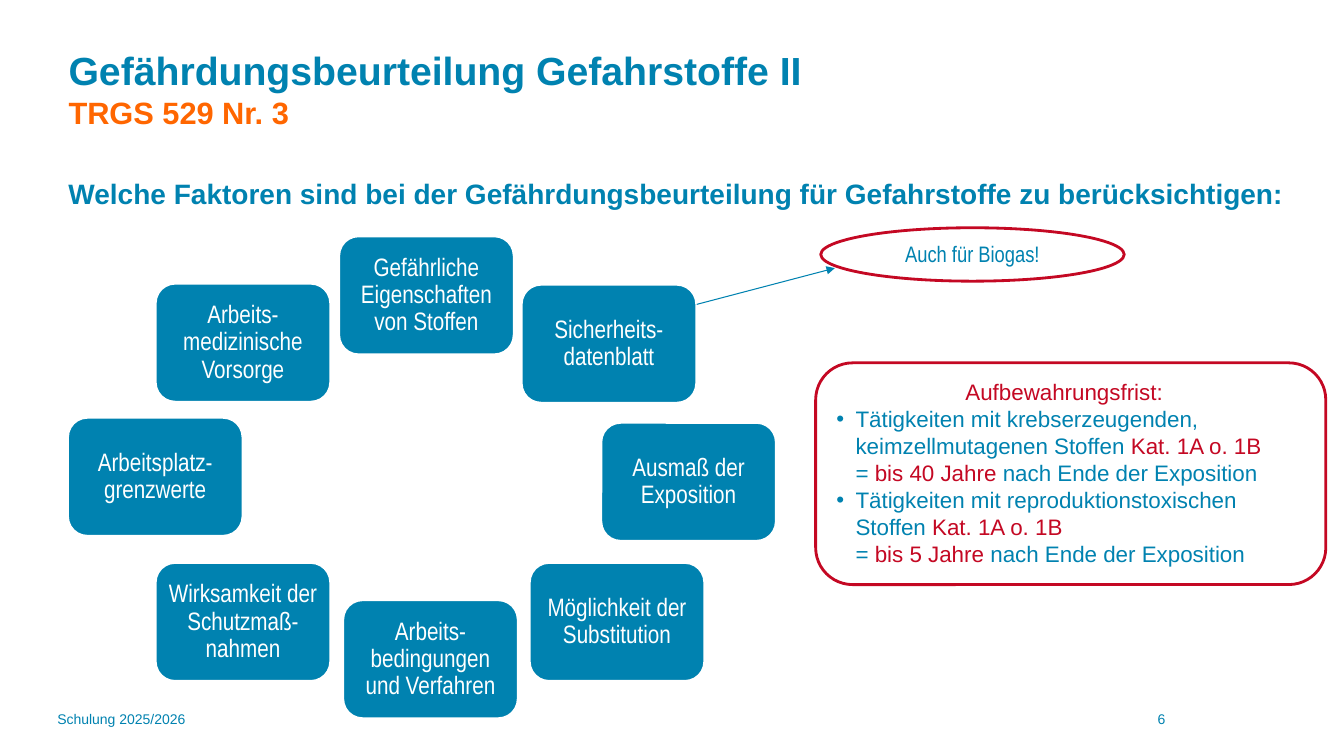
from lxml import etree
from pptx import Presentation
from pptx import util as u
from pptx.dml.color import RGBColor
from pptx.enum import shapes, text
from pptx.oxml.ns import qn

PX = 9144  # EMU per px, 100 px to the inch
BLUE, ORANGE, RED, WHITE = "0082B0", "FF6600", "C40823", "FFFFFF"
CENTER, LEFT = text.PP_ALIGN.CENTER, text.PP_ALIGN.LEFT
MIDDLE, TOP = text.MSO_ANCHOR.MIDDLE, text.MSO_ANCHOR.TOP

TITLE = "Gefährdungsbeurteilung Gefahrstoffe II"
SUBTITLE = "TRGS 529 Nr. 3"
QUESTION = ("Welche Faktoren sind bei der Gefährdungsbeurteilung "
            "für Gefahrstoffe zu berücksichtigen:")
FACTOR_SIZE = (174, 118)
FACTORS = [  # text, left, top
    ("Gefährliche Eigenschaften von Stoffen", 336, 234),
    ("Sicherheits-datenblatt", 517, 282),
    ("Ausmaß der Exposition", 596, 419),
    ("Möglichkeit der Substitution", 525, 558),
    ("Arbeits-bedingungen und Verfahren", 340, 595),
    ("Wirksamkeit der Schutzmaß-nahmen", 154, 558),
    ("Arbeitsplatz-grenzwerte", 67, 414),
    ("Arbeits-medizinische Vorsorge", 154, 281),
]
RETENTION_HEAD = "Aufbewahrungsfrist:"
RETENTION = [  # activity, category, period
    ("Tätigkeiten mit krebserzeugenden, keimzellmutagenen Stoffen ",
     "Kat. 1A o. 1B", "bis 40 Jahre "),
    ("Tätigkeiten mit reproduktionstoxischen Stoffen ",
     "Kat. 1A o. 1B", "bis 5 Jahre "),
]
AFTER_END = "nach Ende der Exposition"
BIOGAS = "Auch für Biogas!"
FOOTER, PAGE = "Schulung 2025/2026", "6"


def px(*lengths):
    return [u.Emu(length * PX) for length in lengths]


def color(hex_code):
    return RGBColor.from_string(hex_code)


def write(paragraph, content, size=16, ink=BLUE, font="Arial", bold=False):
    run = paragraph.add_run()
    run.text = content
    run.font.size = u.Pt(size)
    run.font.name = font
    run.font.bold = bold
    run.font.color.rgb = color(ink)


def set_frame(shape, anchor=TOP, align=LEFT, inset=None):
    """Prepare the text frame and return its first paragraph."""
    frame = shape.text_frame
    frame.word_wrap = True
    frame.auto_size = text.MSO_AUTO_SIZE.NONE
    frame.vertical_anchor = anchor
    if inset is not None:
        frame.margin_left = frame.margin_right = px(inset)[0]
        frame.margin_top = frame.margin_bottom = px(inset)[0]
    first = frame.paragraphs[0]
    first.alignment = align
    return first


def add_label(slide, box, content, align=LEFT, **style):
    label = slide.shapes.add_textbox(*px(*box))
    write(set_frame(label, align=align), content, **style)


def add_box(slide, preset, box, fill, outline):
    shape = slide.shapes.add_shape(preset, *px(*box))
    shape.shadow.inherit = False
    shape.fill.solid()
    shape.fill.fore_color.rgb = color(fill)
    shape.line.color.rgb = color(outline)
    shape.line.width = u.Pt(2)
    return shape


def add_item(frame, bullet):
    """Add a paragraph with a hanging indent, with or without a bullet."""
    paragraph = frame.add_paragraph()
    paragraph.alignment = LEFT
    props = paragraph._p.get_or_add_pPr()
    hang = px(19)[0]
    props.set("marL", str(hang))
    props.set("indent", str(-hang if bullet else 0))
    if bullet:
        tint = etree.SubElement(props, qn("a:buClr"))
        etree.SubElement(tint, qn("a:srgbClr")).set("val", BLUE)
        etree.SubElement(props, qn("a:buFont")).set("typeface", "Arial")
        etree.SubElement(props, qn("a:buChar")).set("char", "•")
    return paragraph


def add_arrow(slide, start, end):
    arrow = slide.shapes.add_connector(
        shapes.MSO_CONNECTOR.STRAIGHT, *px(*start, *end))
    arrow.line.color.rgb = color(BLUE)
    arrow.line.width = u.Pt(0.75)
    etree.SubElement(arrow.line._get_or_add_ln(), qn("a:tailEnd")).set("type", "triangle")
    etree.SubElement(arrow._element.spPr, qn("a:effectLst"))


def main():
    deck = Presentation()
    deck.slide_width, deck.slide_height = px(1333, 750)
    slide = deck.slides.add_slide(deck.slide_layouts[5])

    title = slide.shapes.title
    title.left, title.top, title.width, title.height = px(58, 25, 987, 125)
    heading = set_frame(title, anchor=MIDDLE)
    write(heading, TITLE, size=28, bold=True)
    heading.add_line_break()
    write(heading, SUBTITLE, size=22, ink=ORANGE, bold=True)

    add_label(slide, (58, 170, 1249, 50), QUESTION, size=20, bold=True)
    add_label(slide, (47, 700, 325, 50), FOOTER, size=10)
    add_label(slide, (1013, 700, 278, 50), PAGE, align=CENTER, size=10)

    rounded = shapes.MSO_SHAPE.ROUNDED_RECTANGLE
    for factor, left, top in FACTORS:
        node = add_box(slide, rounded, (left, top, *FACTOR_SIZE), BLUE, WHITE)
        caption = set_frame(node, anchor=MIDDLE, align=CENTER, inset=6)
        caption.line_spacing = 0.9
        write(caption, factor, size=18, ink=WHITE, font="Arial Narrow")

    panel = add_box(slide, rounded, (809, 360, 506, 220), WHITE, RED)
    head = set_frame(panel, align=CENTER)
    head._p.get_or_add_pPr().set("marR", str(px(13)[0]))
    write(head, RETENTION_HEAD, ink=RED)
    for activity, category, period in RETENTION:
        item = add_item(panel.text_frame, bullet=True)
        write(item, activity)
        write(item, category, ink=RED)
        duration = add_item(panel.text_frame, bullet=False)
        write(duration, "= ")
        write(duration, period, ink=RED)
        write(duration, AFTER_END)

    hint = add_box(slide, shapes.MSO_SHAPE.OVAL, (814, 226, 301, 53), WHITE, RED)
    write(set_frame(hint, align=CENTER), BIOGAS, font="Arial Narrow")
    add_arrow(slide, (691, 302), (828, 266))

    deck.save("out.pptx")


if __name__ == "__main__":
    main()
